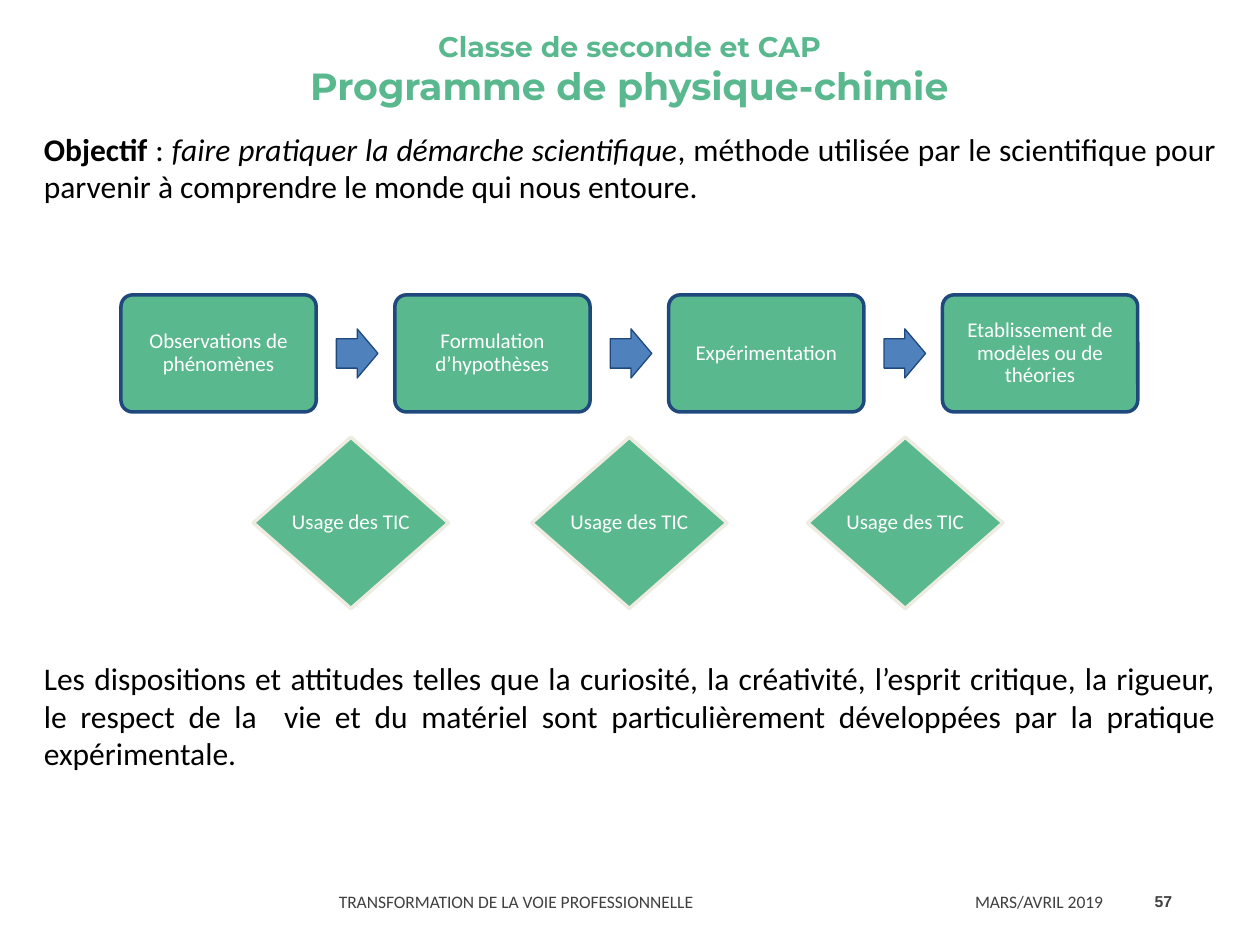
from pptx import Presentation
from pptx.dml.color import RGBColor
from pptx.enum.shapes import MSO_SHAPE
from pptx.enum.text import MSO_ANCHOR, PP_ALIGN
from pptx.util import Inches, Pt

GREEN = RGBColor(0x5A, 0xB8, 0x8F)
NAVY = RGBColor(0x1F, 0x49, 0x7D)
BLUE = RGBColor(0x4F, 0x81, 0xBD)
CREAM = RGBColor(0xEE, 0xEC, 0xE1)
WHITE = RGBColor(0xFF, 0xFF, 0xFF)
BLACK = RGBColor(0, 0, 0)
GREY = RGBColor(0x40, 0x40, 0x40)

STEPS = [
    "Observations de phénomènes",
    "Formulation d’hypothèses",
    "Expérimentation",
    "Etablissement de modèles ou de théories",
]
STEP_WIDTH, STEP_HEIGHT = 1.55, 0.93
ARROW_WIDTH, ARROW_HEIGHT = 0.33, 0.39
DIAMOND_LEFTS = [2.01, 4.22, 6.41]

OBJECTIVE = [
    ("Objectif", True, False),
    (" : ", False, False),
    ("faire pratiquer la démarche scientifique", False, True),
    (", méthode utilisée par le scientifique pour parvenir à comprendre "
     "le monde qui nous entoure.", False, False),
]
ATTITUDES = [
    ("Les dispositions et attitudes telles que la curiosité, la créativité, "
     "l’esprit critique, la rigueur, le respect de la  vie et du matériel sont "
     "particulièrement développées par la pratique expérimentale.", False, False),
]


def set_font(paragraph, name, size, color, bold=False):
    """Set the shared font of a paragraph."""
    font = paragraph.font
    font.name, font.size, font.bold = name, Pt(size), bold
    font.color.rgb = color


def add_text_area(slide, box, anchor=MSO_ANCHOR.TOP):
    """Add a wrapping text box and return its first paragraph."""
    frame = slide.shapes.add_textbox(*map(Inches, box)).text_frame
    frame.word_wrap = True
    frame.vertical_anchor = anchor
    return frame.paragraphs[0]


def add_outlined(slide, preset, box, fill, outline, weight):
    """Add a flat preset shape with a fill and an outline."""
    shape = slide.shapes.add_shape(preset, *map(Inches, box))
    shape.shadow.inherit = False
    shape.fill.solid()
    shape.fill.fore_color.rgb = fill
    shape.line.color.rgb = outline
    shape.line.width = Pt(weight)
    return shape


def add_label(shape, text, wrap):
    """Write a centred white label inside a shape."""
    frame = shape.text_frame
    frame.word_wrap = wrap
    frame.vertical_anchor = MSO_ANCHOR.MIDDLE
    frame.margin_left = frame.margin_right = Inches(0.05)
    frame.margin_top = frame.margin_bottom = Inches(0.05)
    label = frame.paragraphs[0]
    label.text = text
    label.alignment = PP_ALIGN.CENTER
    label.line_spacing = 0.9
    set_font(label, "Calibri", 12, WHITE)


def add_heading(slide, box):
    """Add the two-line heading."""
    heading = add_text_area(slide, box, MSO_ANCHOR.MIDDLE)
    heading.alignment = PP_ALIGN.CENTER
    set_font(heading, "Montserrat", 21.6, GREEN, bold=True)
    level = heading.add_run()
    level.text = "Classe de seconde et CAP"
    level.font.size = Pt(16.2)
    heading.add_line_break()
    heading.add_run().text = "Programme de physique-chimie"


def add_body(slide, box, pieces):
    """Add a justified paragraph made of styled pieces."""
    body = add_text_area(slide, box)
    body.alignment = PP_ALIGN.JUSTIFY
    set_font(body, "Calibri", 18, BLACK)
    for text, bold, italic in pieces:
        run = body.add_run()
        run.text = text
        run.font.bold, run.font.italic = bold, italic


def add_process(slide, box):
    """Add the row of steps joined by block arrows."""
    left, top, width, height = box
    pitch = (width - STEP_WIDTH) / (len(STEPS) - 1)
    for index, step in enumerate(STEPS):
        step_left = left + index * pitch
        step_shape = add_outlined(
            slide, MSO_SHAPE.ROUNDED_RECTANGLE,
            (step_left, top, STEP_WIDTH, height), GREEN, NAVY, 2)
        step_shape.adjustments[0] = 0.1
        add_label(step_shape, step, wrap=True)
        if index < len(STEPS) - 1:
            arrow = add_outlined(
                slide, MSO_SHAPE.RIGHT_ARROW,
                (step_left + STEP_WIDTH + 0.16, top + (height - ARROW_HEIGHT) / 2,
                 ARROW_WIDTH, ARROW_HEIGHT), BLUE, NAVY, 0.75)
            arrow.adjustments[0] = 0.6
            arrow.adjustments[1] = 0.5


def add_ict_use(slide, box):
    """Add one diamond on the use of ICT."""
    diamond = add_outlined(slide, MSO_SHAPE.DIAMOND, box, GREEN, CREAM, 2)
    add_label(diamond, "Usage des TIC", wrap=False)


def add_footer(slide, box):
    """Add the event, date and page number along the bottom."""
    left, top, width, height = box
    date_left, number_left = left + 5.05, left + 6.32
    event = add_text_area(slide, (left, top, 5.05, height), MSO_ANCHOR.MIDDLE)
    event.text = "TRANSFORMATION DE LA VOIE PROFESSIONNELLE"
    date = add_text_area(slide, (date_left, top, 1.27, height), MSO_ANCHOR.MIDDLE)
    date.text = "MARS/AVRIL 2019"
    for note in (event, date):
        note.line_spacing = Pt(13.2)
        set_font(note, "Calibri", 10, GREY)
    number = add_text_area(
        slide, (number_left, top, left + width - number_left, height),
        MSO_ANCHOR.MIDDLE)
    number.text = "57"
    number.alignment = PP_ALIGN.RIGHT
    set_font(number, "Arial", 9, GREY, bold=True)


def main():
    """Build and save the slide."""
    presentation = Presentation()
    presentation.slide_width, presentation.slide_height = Inches(10), Inches(7.5)
    slide = presentation.slides.add_slide(presentation.slide_layouts[6])
    add_heading(slide, (0.24, 0.15, 9.51, 0.79))
    add_body(slide, (0.25, 0.98, 9.5, 0.7), OBJECTIVE)
    add_process(slide, (0.96, 2.34, 8.07, STEP_HEIGHT))
    for diamond_left in DIAMOND_LEFTS:
        add_ict_use(slide, (diamond_left, 3.47, 1.55, 1.36))
    add_body(slide, (0.25, 5.18, 9.5, 1), ATTITUDES)
    add_footer(slide, (2.59, 6.95, 6.81, 0.4))
    presentation.save("out.pptx")


if __name__ == "__main__":
    main()
